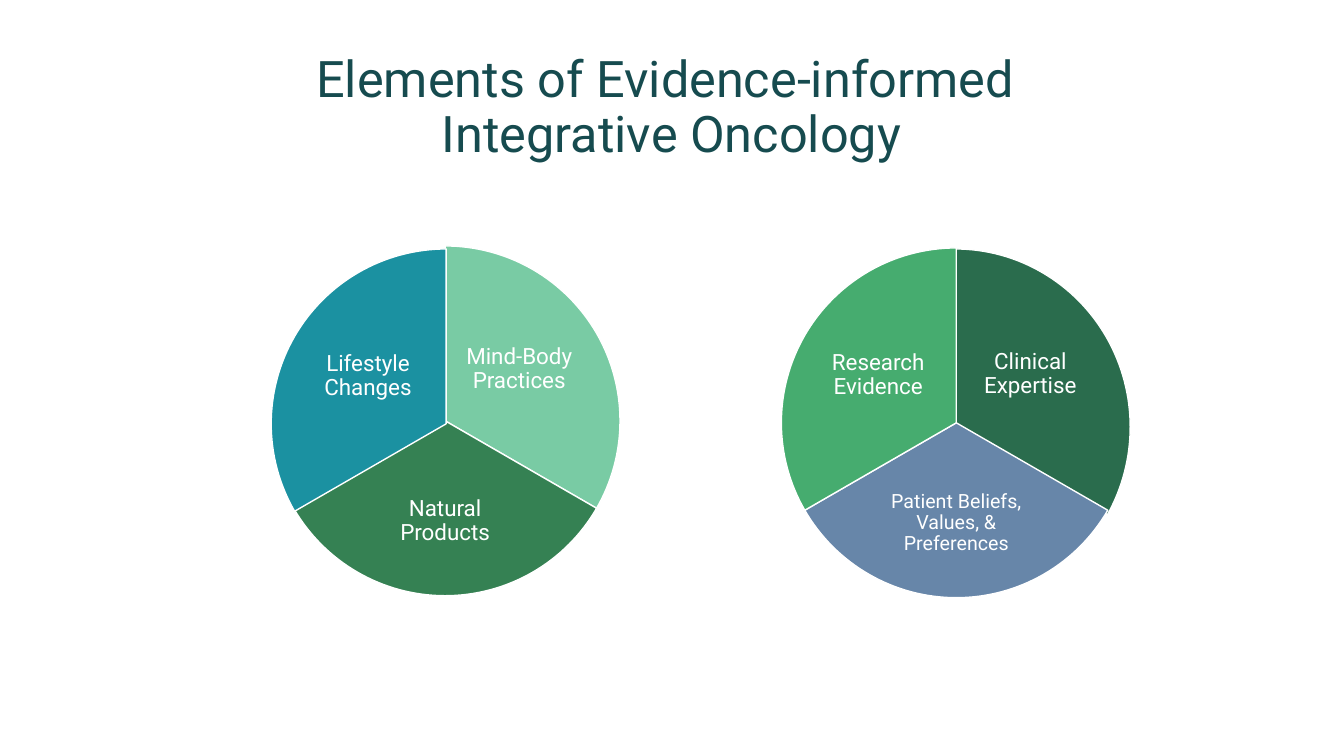
"""Build a slide with two three-part pies of integrative oncology."""
from typing import NamedTuple

from pptx import Presentation
from pptx.dml.color import RGBColor
from pptx.enum.shapes import MSO_SHAPE as Preset
from pptx.enum.text import MSO_ANCHOR as Anchor, MSO_AUTO_SIZE as AutoSize, PP_ALIGN as Align
from pptx.util import Emu, Pt

EMU_PER_PX = 9144
FONT = "Roboto"
WHITE = "FFFFFF"
RIGHT, BOTTOM, LEFT = (162, 18), (18, 90), (90, 162)


class Area(NamedTuple):
    left: int
    top: int
    width: int
    height: int


class Slice(NamedTuple):
    label: str
    color: str
    angles: tuple[int, int]
    pie: Area
    text: Area
    size: int = 16


PIES = [
    [
        Slice("Mind-Body Practices", "79CBA4", RIGHT, Area(268, 244, 347, 347), Area(456, 308, 118, 116)),
        Slice("Natural Products", "358153", BOTTOM, Area(268, 244, 347, 347), Area(363, 463, 157, 108)),
        Slice("Lifestyle Changes", "1B91A1", LEFT, Area(269, 247, 347, 347), Area(306, 315, 118, 116)),
    ],
    [
        Slice("Clinical Expertise", "2A6C4D", RIGHT, Area(774, 247, 347, 353), Area(963, 312, 118, 118)),
        Slice("Patient Beliefs, Values, & Preferences", "6786A9", BOTTOM,
              Area(775, 246, 347, 347), Area(870, 465, 157, 108), 14),
        Slice("Research Evidence", "46AC6F", LEFT, Area(775, 246, 347, 347), Area(812, 314, 118, 116)),
    ],
]


def px(length: int) -> Emu:
    return Emu(length * EMU_PER_PX)


def rgb(value: str) -> RGBColor:
    return RGBColor.from_string(value)


def bounds(area: Area) -> list[Emu]:
    return [px(length) for length in area]


def write(frame, text: str, size: int, color: str, anchor: Anchor) -> None:
    frame.text = text
    frame.word_wrap = True
    frame.auto_size = AutoSize.NONE
    frame.vertical_anchor = anchor
    for para in frame.paragraphs:
        para.alignment = Align.CENTER
        para.line_spacing = 0.9
        for span in para.runs:
            span.font.name = FONT
            span.font.size = Pt(size)
            span.font.color.rgb = rgb(color)


def draw_slice(shapes, part: Slice) -> None:
    wedge = shapes.add_shape(Preset.PIE, *bounds(part.pie))
    wedge.adjustments[0], wedge.adjustments[1] = part.angles
    wedge.shadow.inherit = False
    wedge.fill.solid()
    wedge.fill.fore_color.rgb = rgb(part.color)
    wedge.line.color.rgb = rgb(WHITE)
    wedge.line.width = Pt(1)
    frame = shapes.add_textbox(*bounds(part.text)).text_frame
    frame.margin_left = frame.margin_right = frame.margin_top = frame.margin_bottom = px(2)
    write(frame, part.label, part.size, WHITE, Anchor.MIDDLE)


def main() -> None:
    deck = Presentation()
    deck.slide_width, deck.slide_height = px(1333), px(750)
    page = deck.slides.add_slide(deck.slide_layouts[5])
    page.background.fill.solid()
    page.background.fill.fore_color.rgb = rgb(WHITE)
    title = page.shapes.title
    title.left, title.top, title.width, title.height = bounds(Area(141, 42, 1050, 125))
    write(title.text_frame, "Elements of Evidence-informed \vIntegrative Oncology", 36, "164B4F", Anchor.BOTTOM)
    for slices in PIES:
        group = page.shapes.add_group_shape()
        for part in slices:
            draw_slice(group.shapes, part)
    deck.save("out.pptx")


if __name__ == "__main__":
    main()
